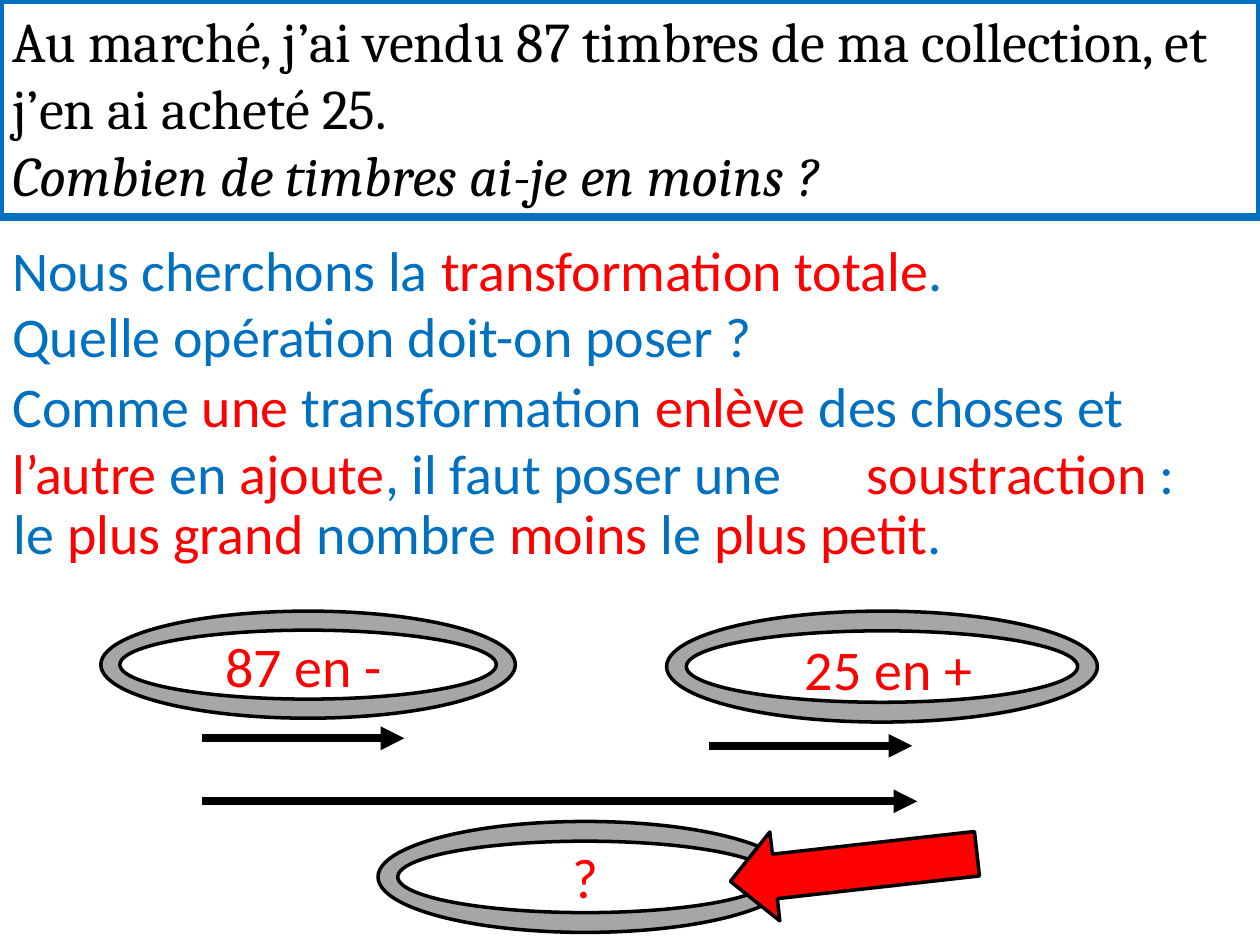
"""Build a word-problem slide about total transformations."""
from dataclasses import dataclass
from typing import Any

from lxml import etree
from pptx import Presentation
from pptx import util as u
from pptx.dml import color
from pptx.enum import shapes, text
from pptx.oxml import ns

BLUE, RED, BLACK, GREY = "0070C0", "FF0000", "000000", "A6A6A6"


def rgb(code):
    """Turn a hex string into a colour."""
    return color.RGBColor.from_string(code)


def apply(item, style):
    """Set each attribute named in a style."""
    for key, value in style.items():
        setattr(item, key, value)


def pts(*nums):
    """Turn numbers into point lengths."""
    return [u.Pt(n) for n in nums]


@dataclass
class Board:
    """Hold the style and the current slide."""
    slide: Any
    size: int = 32
    font: str = "Calibri"
    thick: float = 4.5
    thin: float = 2

    def edge(self, item, code, width):
        """Draw an outline."""
        item.line.color.rgb = rgb(code)
        item.line.width = u.Pt(width)

    def run(self, para, words, code, **extra):
        """Add one run of text."""
        run = para.add_run()
        run.text = words
        apply(run.font, {"size": u.Pt(self.size), "name": self.font, **extra})
        run.font.color.rgb = rgb(code)

    def title(self, box, lines):
        """Fill the framed title, one paragraph for each line."""
        item = self.slide.shapes.title
        apply(item, dict(zip(("left", "top", "width", "height"), pts(*box))))
        self.edge(item, BLUE, self.thick)
        frame = item.text_frame
        apply(frame, {"word_wrap": True, "auto_size": text.MSO_AUTO_SIZE.NONE,
                      "vertical_anchor": text.MSO_ANCHOR.TOP})
        for i, (words, slant) in enumerate(lines):
            para = frame.add_paragraph() if i else frame.paragraphs[0]
            para.alignment = text.PP_ALIGN.LEFT
            self.run(para, words, BLACK, name="Cambria", italic=slant)

    def note(self, box, words, align=text.PP_ALIGN.LEFT):
        """Add a text box whose bars switch between blue and red."""
        frame = self.slide.shapes.add_textbox(*pts(*box)).text_frame
        frame.word_wrap = True
        para = frame.paragraphs[0]
        para.alignment = align
        for i, part in enumerate(words.split("|")):
            if part:
                self.run(para, part, (BLUE, RED)[i % 2])

    def shape(self, kind, box, code, turn=0, adjust=None):
        """Add a filled and outlined preset shape."""
        item = self.slide.shapes.add_shape(kind, *pts(*box))
        item.shadow.inherit = False
        item.fill.solid()
        item.fill.fore_color.rgb = rgb(code)
        self.edge(item, BLACK, self.thin)
        item.rotation = turn
        if adjust is not None:
            item.adjustments[0] = adjust

    def arrow(self, left, right, top):
        """Add a level arrow pointing right."""
        item = self.slide.shapes.add_connector(
            shapes.MSO_CONNECTOR.STRAIGHT, *pts(left, top, right, top))
        self.edge(item, BLACK, self.thick)
        etree.SubElement(item.line._get_or_add_ln(), ns.qn("a:tailEnd"), type="triangle")
        etree.SubElement(item._element.spPr, ns.qn("a:effectLst"))


def main():
    """Build and save the slide."""
    deck = Presentation()
    deck.slide_width, deck.slide_height = pts(720, 540)
    board = Board(deck.slides.add_slide(deck.slide_layouts[5]))
    kinds = shapes.MSO_SHAPE

    board.title((0, 0, 720, 124), [
        ("Au marché, j’ai vendu 87 timbres de ma collection, et j’en ai acheté 25.", False),
        ("Combien de timbres ai-je en moins ?", True)])

    for box in ((57.6, 349.2, 236.9, 61.2), (216, 469.4, 236.9, 63.4),
                (380.9, 349.2, 246.2, 63.4)):
        board.shape(kinds.DONUT, box, GREY, adjust=0.178)
    for ends in ((115.2, 231.1, 421.9), (115.2, 524.2, 457.9), (405.4, 521.3, 426.2)):
        board.arrow(*ends)

    mid = text.PP_ALIGN.CENTER
    for left, top, words, align in (
            (121.7, 357.1, "|87 en -", None), (452.9, 359.3, "|25 en +", None),
            (270.7, 478.1, "|?", mid)):
        board.note((left, top, 127.4, 46), words, align)
    board.shape(kinds.RIGHT_ARROW, (416.9, 470.2, 141.8, 51.1), RED, turn=173.6)

    for left, top, width, height, words in (
            (0, 131, 720, 46, "Nous cherchons la |transformation totale|."),
            (0, 168.5, 720, 46, "Quelle opération doit-on poser ?"),
            (0, 208.8, 720, 85, "Comme |une| transformation |enlève| des choses et "
             "|l’autre| en |ajoute|, il faut poser une"),
            (488.2, 247, 231.8, 46, "|soustraction |:"),
            (0.7, 281.5, 720, 46,
             "le |plus grand |nombre |moins |le |plus petit|.")):
        board.note((left, top, width, height), words)

    deck.save("out.pptx")


if __name__ == "__main__":
    main()
